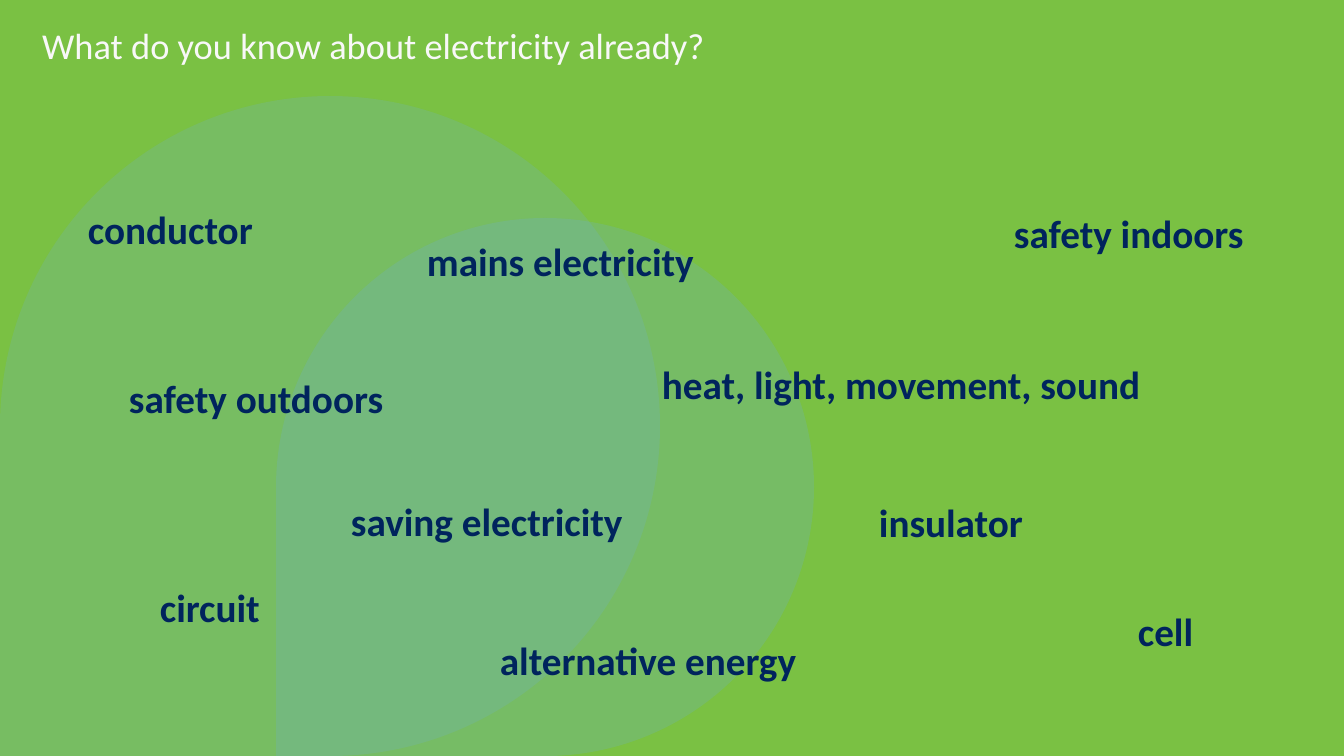
from lxml import etree
from pptx import Presentation
from pptx.dml.color import RGBColor
from pptx.enum.shapes import MSO_SHAPE
from pptx.enum.text import MSO_ANCHOR, MSO_AUTO_SIZE, PP_ALIGN
from pptx.oxml.ns import qn
from pptx.util import Pt

TEAR = MSO_SHAPE.TEAR
MIDDLE = MSO_ANCHOR.MIDDLE
FIXED = MSO_AUTO_SIZE.NONE
LEFT = PP_ALIGN.LEFT
SCALE = 914400 / 100.8
WIDTH, HEIGHT = 1344, 756
TITLE_H = 96
WORD_H = 105

WORDS = [
    ("conductor", 78, 200, 236),
    ("insulator", 869, 493, 236),
    ("circuit", 150, 578, 236),
    ("mains electricity", 417, 232, 345),
    ("cell", 1128, 602, 123),
    ("alternative energy", 490, 631, 404),
    ("safety indoors", 1004, 204, 298),
    ("safety outdoors", 119, 369, 298),
    ("saving electricity", 341, 492, 298),
    ("heat, light, movement, sound", 652, 355, 515),
]


def px(*sizes):
    return [round(size * SCALE) for size in sizes]


def paint(fill, color, alpha=100):
    fill.solid()
    fill.fore_color.rgb = RGBColor.from_string(color)
    if alpha < 100:
        node = fill._xPr.find(qn("a:solidFill"))[0]
        etree.SubElement(node, qn("a:alpha"), val=str(alpha * 1000))


def write(frame, text, size, color, bold=False):
    frame.word_wrap = True
    frame.auto_size = FIXED
    para = frame.paragraphs[0]
    para.text = text
    para.alignment = LEFT
    font = para.font
    font.name = "Calibri"
    font.size = Pt(size)
    font.bold = bold
    paint(font.fill, color)
    return para


def add_title(slide, box):
    title = slide.shapes.title
    title.left, title.top, title.width, title.height = px(*box)
    title.text_frame.vertical_anchor = MIDDLE
    para = write(title.text_frame, "What do you know about electricity already?", 26, "F8F8F8")
    para.line_spacing = 0.9


def add_drops(slide, box):
    left, top, width, height = box
    for shift, size, alpha in [(0, height, 20), (276, 538, 22)]:
        drop = slide.shapes.add_shape(
            TEAR, *px(left + shift, top + height - size, size, size)
        )
        drop.rotation = 180
        drop.shadow.inherit = False
        drop.line.fill.background()
        paint(drop.fill, "6CADDF", alpha)


def add_words(slide, box):
    left, top, width, height = box
    for text, x, y, wide in WORDS:
        label = slide.shapes.add_textbox(*px(left + x, top + y, wide, WORD_H))
        write(label.text_frame, text, 28, "00245D", True)


def main():
    deck = Presentation()
    deck.slide_width, deck.slide_height = px(WIDTH, HEIGHT)
    slide = deck.slides.add_slide(deck.slide_layouts[5])
    paint(slide.background.fill, "7AC143")
    add_title(slide, (32, 0, 908, TITLE_H))
    add_drops(slide, (0, TITLE_H, WIDTH, HEIGHT - TITLE_H))
    add_words(slide, (0, 0, WIDTH, HEIGHT))
    deck.save("out.pptx")


if __name__ == "__main__":
    main()
